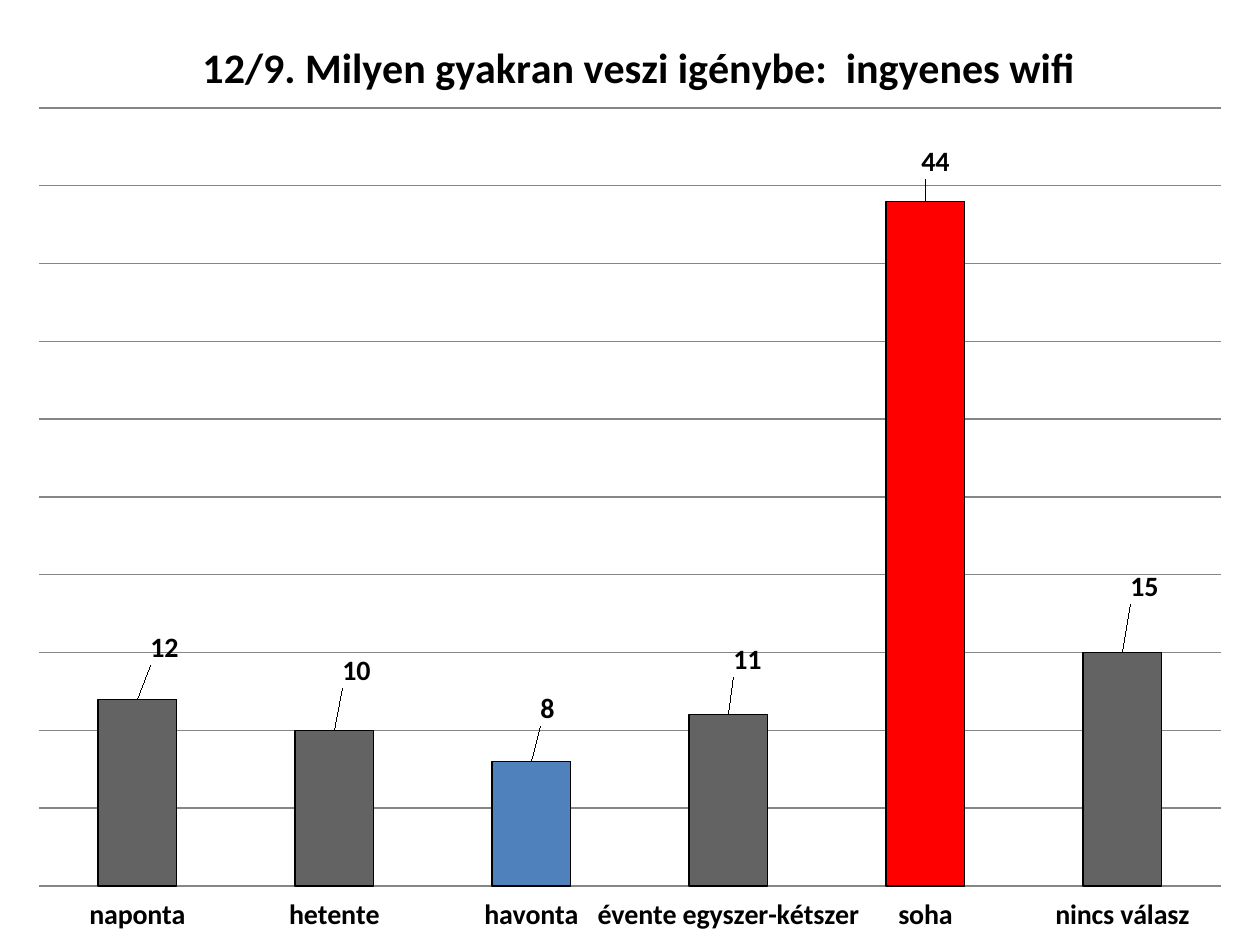
from lxml.etree import SubElement
from pptx import Presentation
from pptx.chart.data import CategoryChartData
from pptx.dml.color import RGBColor
from pptx.enum.chart import XL_CHART_TYPE, XL_LABEL_POSITION, XL_TICK_LABEL_POSITION, XL_TICK_MARK
from pptx.oxml import parse_xml
from pptx.oxml.ns import nsdecls, qn
from pptx.util import Emu, Pt

SCALE = 914400 / 126
CHART = (15, 0, 1230, 945)
TITLE = "12/9. Milyen gyakran veszi igénybe:  ingyenes wifi"
GREY, BLUE, RED = "636363", "4F81BD", "FF0000"
ANSWERS = [
    ("naponta", 12, GREY, (27, -29)),
    ("hetente", 10, GREY, (22, -37)),
    ("havonta", 8, BLUE, (16, -30)),
    ("évente egyszer-kétszer", 11, GREY, (19, -32)),
    ("soha", 44, RED, (10, -17)),
    ("nincs válasz", 15, GREY, (22, -43)),
]


def px(n):
    return Emu(round(n * SCALE))


def rgb(color):
    return RGBColor.from_string(color)


class SlideBuilder:
    """Holds the chart style and the current slide."""

    font_name = "Calibri"
    ink = "000000"
    grid = "868686"

    def __init__(self, prs):
        self.s = prs.slides.add_slide(prs.slide_layouts[6])

    def style_font(self, font, size, bold=True):
        font.name = self.font_name
        font.size = Pt(size)
        font.bold = bold
        font.color.rgb = rgb(self.ink)

    def style_line(self, line, color):
        line.color.rgb = rgb(color)
        line.width = Pt(0.75)

    def place(self, parent, index, fractions, settings=()):
        layout = parent.find(qn("c:layout"))
        if layout is None:
            layout = parse_xml(f"<c:layout {nsdecls('c')}/>")
            parent.insert(index, layout)
        manual = SubElement(layout, qn("c:manualLayout"))
        for tag, value in [*settings, *zip("xywh", fractions)]:
            SubElement(manual, qn(f"c:{tag}")).set("val", str(value))

    def fractions(self, *lengths):
        sizes = CHART[2:] * 2
        return [round(n / size, 4) for n, size in zip(lengths, sizes)]

    def title(self, chart, text, left, top):
        title = chart.chart_title
        tf = title.text_frame
        tf.text = text
        self.style_font(tf.paragraphs[0].runs[0].font, 24)
        edges = [("xMode", "edge"), ("yMode", "edge")]
        self.place(title._element, 1, self.fractions(left, top), edges)

    def axes(self, chart):
        cat, val = chart.category_axis, chart.value_axis
        cat.major_tick_mark = cat.minor_tick_mark = XL_TICK_MARK.NONE
        cat.tick_label_position = XL_TICK_LABEL_POSITION.LOW
        cat.has_major_gridlines = False
        self.style_font(cat.tick_labels.font, 16)
        self.style_line(cat.format.line, self.grid)
        val.visible = False
        val.minimum_scale, val.maximum_scale, val.major_unit = 0, 50, 5
        val.has_major_gridlines = True
        self.style_line(val.major_gridlines.format.line, self.grid)

    def bar(self, point, color, offset):
        point.format.fill.solid()
        point.format.fill.fore_color.rgb = rgb(color)
        self.style_line(point.format.line, self.ink)
        label = point.data_label
        self.style_font(label.font, 16)
        label.position = XL_LABEL_POSITION.OUTSIDE_END
        self.place(label._get_or_add_dLbl(), 1, self.fractions(*offset))

    def column_chart(self, box, text, answers):
        data = CategoryChartData()
        data.categories = [name for name, *_ in answers]
        data.add_series("Series 1", [value for _, value, *_ in answers])
        frame = self.s.shapes.add_chart(XL_CHART_TYPE.COLUMN_CLUSTERED, *map(px, box), data)
        chart = frame.chart
        chart.has_legend = False
        self.style_font(chart.font, 10, False)
        self.title(chart, text, 180, 32)
        self.axes(chart)
        plot = chart.plots[0]
        plot.gap_width = 150
        plot.vary_by_categories = False
        series = plot.series[0]
        series.format.fill.solid()
        series.format.fill.fore_color.rgb = rgb(BLUE)
        self.style_line(series.format.line, self.ink)
        labels = series.data_labels
        labels.show_value = True
        self.style_font(labels.font, 16)
        for i, (_, _, color, offset) in enumerate(answers):
            self.bar(series.points[i], color, offset)
        inner = [("layoutTarget", "inner"), ("xMode", "edge"), ("yMode", "edge")]
        area = chart._chartSpace.chart.plotArea
        self.place(area, 0, self.fractions(24, 108, 1182, 778), inner)


def main():
    prs = Presentation()
    prs.slide_width, prs.slide_height = px(1260), px(945)
    SlideBuilder(prs).column_chart(CHART, TITLE, ANSWERS)
    prs.save("out.pptx")


if __name__ == "__main__":
    main()
